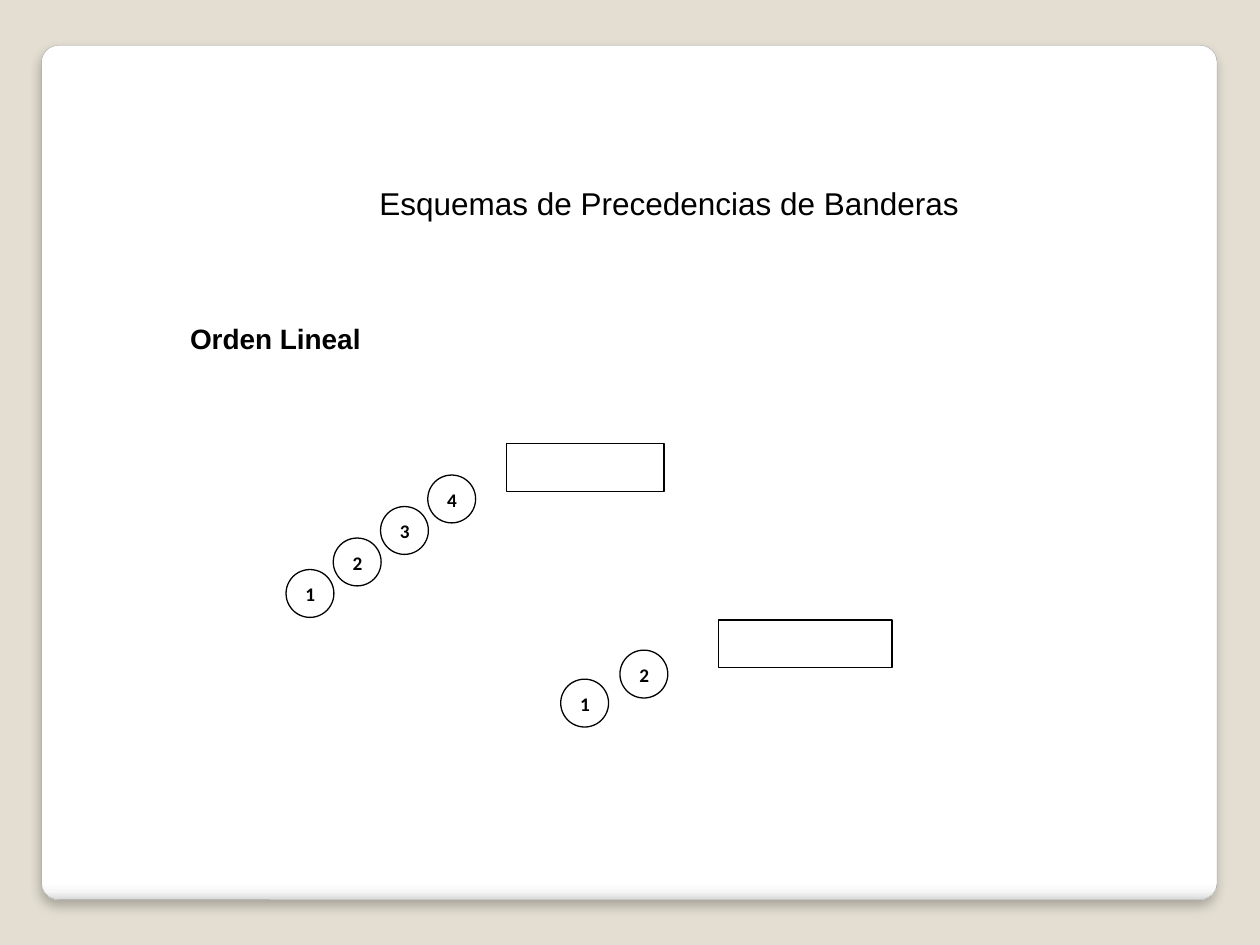
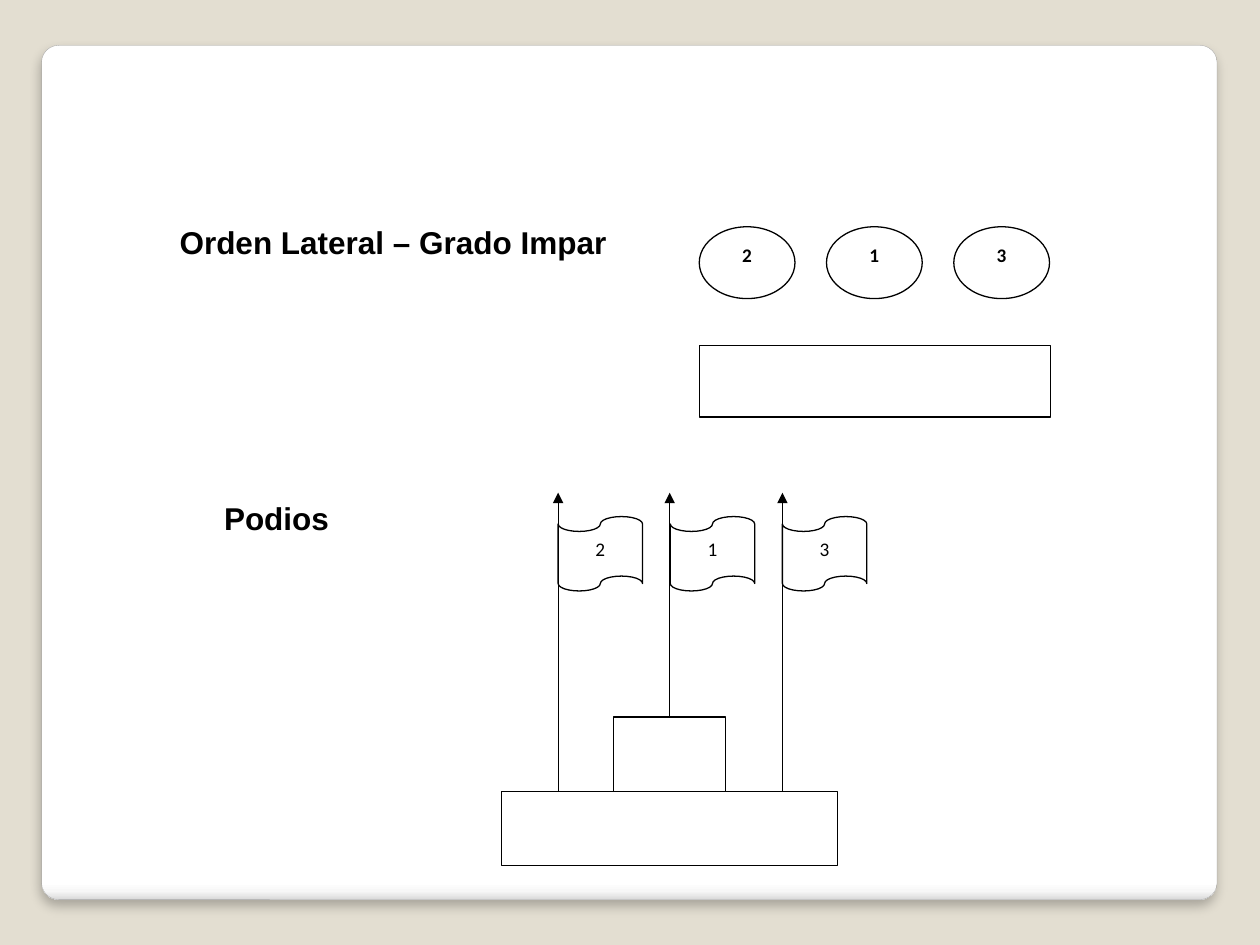
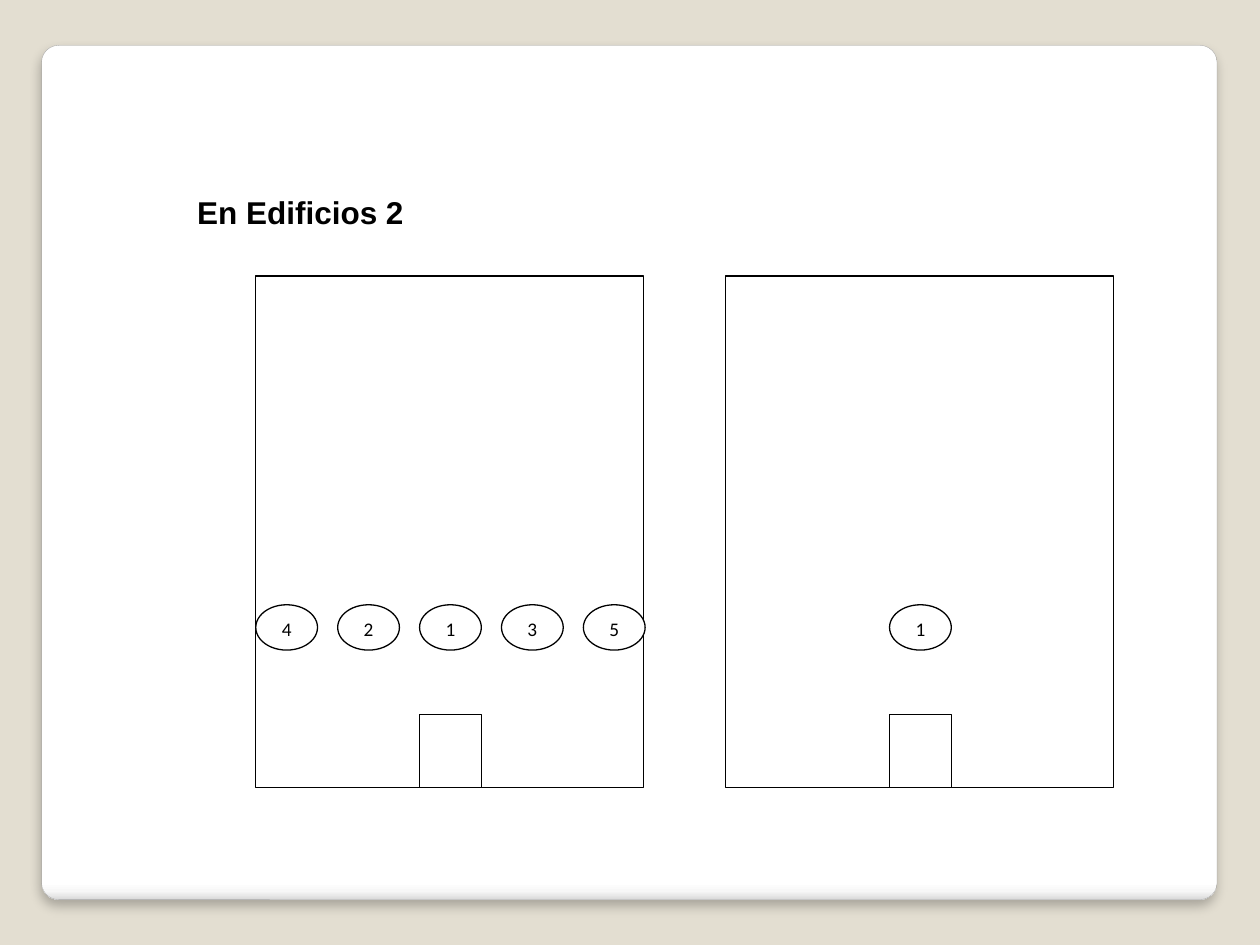
from lxml import etree
from pptx import Presentation
from pptx.dml.color import RGBColor
from pptx.enum.shapes import MSO_CONNECTOR, MSO_SHAPE
from pptx.enum.text import MSO_ANCHOR, PP_ALIGN
from pptx.oxml import parse_xml
from pptx.oxml.ns import nsdecls, qn
from pptx.util import Inches, Pt

RECTANGLE = MSO_SHAPE.RECTANGLE
ELLIPSE = MSO_SHAPE.OVAL
FLAG = MSO_SHAPE.FLOWCHART_PUNCHED_TAPE
ROUNDED = MSO_SHAPE.ROUNDED_RECTANGLE
STRAIGHT = MSO_CONNECTOR.STRAIGHT
TOP = MSO_ANCHOR.TOP
LEFT, CENTER = PP_ALIGN.LEFT, PP_ALIGN.CENTER

COLORS = {
    "background": "E3DED1",
    "white": "FFFFFF",
    "ink": "000000",
    "card_line": "A4A4A4",
    "card_edge": "F7F7F7",
    "card_bottom": "DADADA",
}
CARD_STOPS = [(0, "white"), (98, "white"), (99, "card_edge"), (100, "card_bottom")]


def write_text(shape, text, size=18, font="Arial", bold=True, align=CENTER, space_after=10):
    frame = shape.text_frame
    frame.word_wrap = True
    frame.vertical_anchor = TOP
    paragraph = frame.paragraphs[0]
    paragraph.alignment = align
    paragraph.space_after = Pt(space_after)
    run = paragraph.add_run()
    run.text = text
    run.font.size = Pt(size)
    run.font.name = font
    run.font.bold = bold
    run.font.color.rgb = RGBColor.from_string(COLORS["ink"])


def add_figure(slide, kind, left, top, width, height, text="", bold=False):
    shape = slide.shapes.add_shape(kind, Inches(left), Inches(top), Inches(width), Inches(height))
    shape.shadow.inherit = False
    shape.fill.solid()
    shape.fill.fore_color.rgb = RGBColor.from_string(COLORS["white"])
    shape.line.color.rgb = RGBColor.from_string(COLORS["ink"])
    shape.line.width = Pt(0.75)
    if text:
        write_text(shape, text, size=11, font="Calibri", bold=bold)
    return shape


presentation = Presentation()
presentation.slide_width = Inches(10)
presentation.slide_height = Inches(7.5)
background = presentation.slide_master.background.fill
background.solid()
background.fore_color.rgb = RGBColor.from_string(COLORS["background"])

headings = [
    [
        ("Esquemas de Precedencias de Banderas", 1.95, 1.41, 6.72, 0.51,
         {"bold": False, "space_after": 0}),
        ("Orden Lineal", 1.41, 2.5, 2.19, 0.37, {"size": 16, "align": LEFT, "space_after": 0}),
    ],
    [
        ("Orden Lateral – Grado Impar", 1.31, 1.72, 3.62, 0.38, {}),
        ("Podios", 1.56, 3.91, 1.27, 0.38, {}),
    ],
    [("En Edificios 2", 1.25, 1.48, 2.27, 0.38, {})],
]

slides = []
for slide_headings in headings:
    slide = presentation.slides.add_slide(presentation.slide_layouts[6])
    card = add_figure(slide, ROUNDED, 0.33, 0.36, 9.33, 6.78)
    card.adjustments[0] = 0.02
    card.line.color.rgb = RGBColor.from_string(COLORS["card_line"])
    card.line.width = Pt(0.16)
    card.fill.gradient()
    card.fill.gradient_angle = 270
    properties = card._element.spPr
    stops = properties.find(qn("a:gradFill")).find(qn("a:gsLst"))
    for stop in list(stops):
        stops.remove(stop)
    for position, color in CARD_STOPS:
        stop = etree.SubElement(stops, qn("a:gs"), pos=str(position * 1000))
        etree.SubElement(stop, qn("a:srgbClr"), val=COLORS[color])
    properties.find(qn("a:effectLst")).append(parse_xml(
        f'<a:outerShdw {nsdecls("a")} blurRad="{Pt(6)}" dist="{Pt(4)}" dir="5400000" '
        f'algn="t" rotWithShape="0"><a:srgbClr val="{COLORS["ink"]}">'
        '<a:alpha val="25000"/></a:srgbClr></a:outerShdw>'))
    for text, left, top, width, height, text_format in slide_headings:
        box = slide.shapes.add_textbox(Inches(left), Inches(top), Inches(width), Inches(height))
        write_text(box, text, **text_format)
    slides.append(slide)

linear_slide, lateral_slide, building_slide = slides

add_figure(linear_slide, RECTANGLE, 4.02, 3.52, 1.25, 0.38)
add_figure(linear_slide, RECTANGLE, 5.7, 4.92, 1.38, 0.38)
for count, left, top, step_x, step_y in [(4, 2.27, 4.52, 0.375, 0.25), (2, 4.45, 5.39, 0.47, 0.23)]:
    for index in range(count):
        add_figure(linear_slide, ELLIPSE, left + index * step_x, top - index * step_y,
                   0.38, 0.38, str(index + 1), bold=True)

add_figure(lateral_slide, RECTANGLE, 5.55, 2.74, 2.79, 0.57)
base = add_figure(lateral_slide, RECTANGLE, 3.98, 6.28, 2.67, 0.59)
podium = add_figure(lateral_slide, RECTANGLE, 4.87, 5.69, 0.89, 0.59)
for index, number in enumerate("213"):
    add_figure(lateral_slide, ELLIPSE, 5.55 + index * 1.01, 1.8, 0.76, 0.57, number, bold=True)
    pole_x = 4.43 + index * 0.89
    add_figure(lateral_slide, FLAG, pole_x, 4.1, 0.67, 0.59, number)
    pole = lateral_slide.shapes.add_connector(
        STRAIGHT, Inches(pole_x), base.top, Inches(pole_x), Inches(3.91))
    if number == "1":
        pole.begin_connect(podium, 0)
        pole.end_x = pole.begin_x
    pole.line.color.rgb = RGBColor.from_string(COLORS["ink"])
    pole.line.width = Pt(0.75)
    etree.SubElement(pole.line._get_or_add_ln(), qn("a:tailEnd"), type="triangle")
    etree.SubElement(pole._element.spPr, qn("a:effectLst"))

for building_left, numbers in [(2.03, "42135"), (5.76, "1")]:
    add_figure(building_slide, RECTANGLE, building_left, 2.19, 3.08, 4.06)
    door_left = building_left + 1.3
    add_figure(building_slide, RECTANGLE, door_left, 5.67, 0.49, 0.58)
    for index, number in enumerate(numbers):
        left = door_left + (index - len(numbers) // 2) * 0.65
        add_figure(building_slide, ELLIPSE, left, 4.8, 0.49, 0.36, number)

presentation.save("out.pptx")
